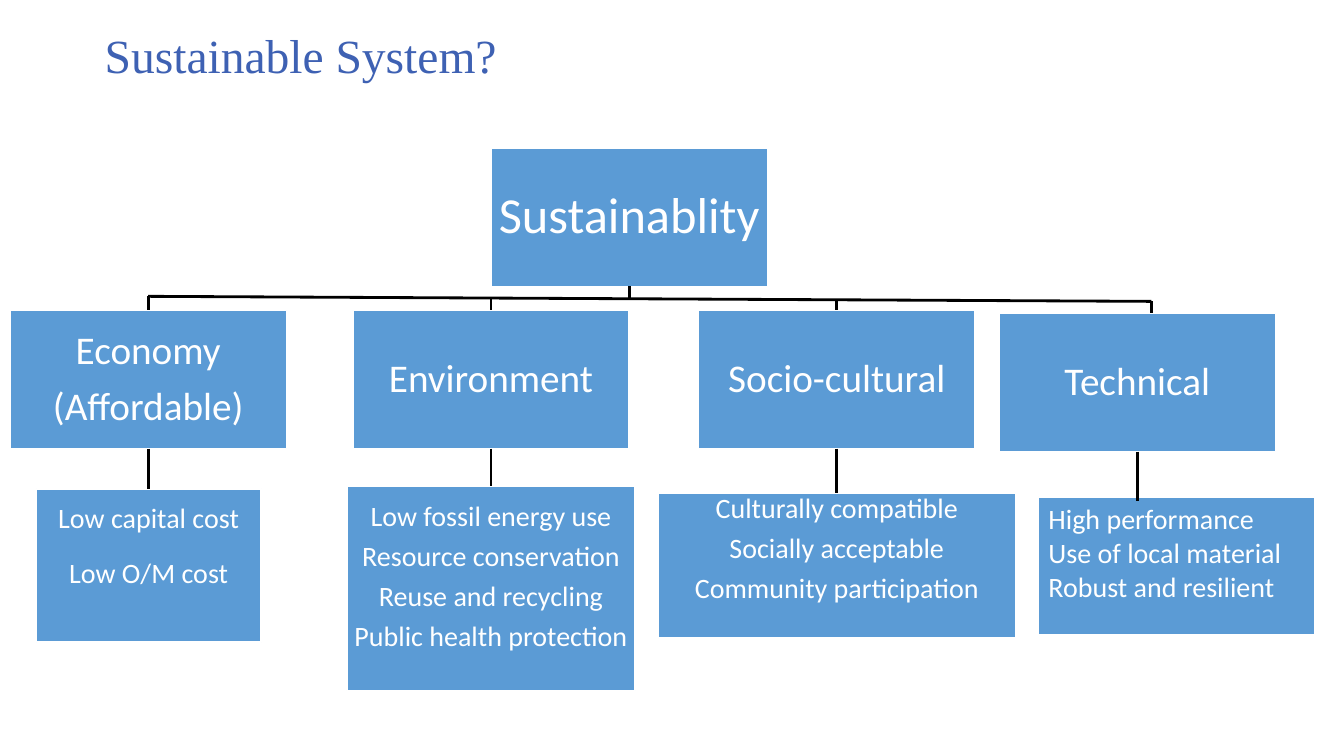
from dataclasses import dataclass

from lxml import etree
from pptx import Presentation
from pptx import util as u
from pptx.dml.color import RGBColor
from pptx.enum import shapes, text
from pptx.oxml.ns import qn

CELL = 0.1  # inches per grid column and row


@dataclass(frozen=True)
class Theme:
    box: str = "5B9BD5"
    white: str = "FFFFFF"
    line: str = "000000"
    title: str = "3E61B3"
    title_font: str = "Times New Roman"
    body_font: str = "Calibri"
    title_size: int = 34
    root_size: int = 36
    pillar_size: int = 28
    detail_size: int = 20
    border: float = 1
    connector: float = 2


@dataclass(frozen=True)
class Box:
    """A rectangle in grid columns and rows."""
    col: float
    row: float
    cols: float
    rows: float

    @property
    def center(self) -> float:
        return self.col + self.cols / 2

    @property
    def bottom(self) -> float:
        return self.row + self.rows


@dataclass(frozen=True)
class Branch:
    pillar: Box
    heading: list[str]
    detail: Box
    points: list[str]
    drop: float  # column where the pillar hangs from the bar
    stem_end: float  # row where the stem meets the detail box
    pad: float = 0.1  # rows above the points
    gap: float = 7  # points after each line
    flush_left: bool = False


T = Theme()
ROOT = Box(48.7, 14.7, 27.4, 13.7)
BAR_LEFT, BAR_RIGHT = (14.7, 29.4), (114.2, 29.9)
BRANCHES = [
    Branch(Box(1, 30.8, 27.4, 13.7), ["Economy", "(Affordable)"],
           Box(3.6, 48.5, 22.3, 15.2), ["Low capital cost", "Low O/M cost"],
           drop=14.7, stem_end=48.5, pad=1.5, gap=18),
    Branch(Box(35, 30.8, 27.4, 13.7), ["Environment"],
           Box(34.4, 48.2, 28.6, 20.3),
           ["Low fossil energy use", "Resource conservation",
            "Reuse and recycling", "Public health protection"],
           drop=48.7, stem_end=48.2, pad=1.6),
    Branch(Box(69.3, 30.8, 27.4, 13.7), ["Socio-cultural"],
           Box(65.3, 48.9, 35.4, 14.4),
           ["Culturally compatible", "Socially acceptable", "Community participation"],
           drop=83, stem_end=48.9),
    Branch(Box(99.1, 31.1, 27.4, 13.7), ["Technical"],
           Box(103, 49.3, 27.4, 13.7),
           ["High performance", "Use of local material", "Robust and resilient"],
           drop=114.2, stem_end=49.7, pad=0.5, gap=0, flush_left=True),
]


def grid(cells: float) -> u.Length:
    return u.Inches(cells * CELL)


def rgb(value: str) -> RGBColor:
    return RGBColor.from_string(value)


def write(sp, lines: list[str], *, size: float, color: str = T.white,
          font: str = T.body_font, align=text.PP_ALIGN.CENTER,
          anchor=text.MSO_ANCHOR.TOP, spacing: float = 0.9, after: float = 0,
          side: float = 0.1, top: float = 0.1) -> None:
    """Fill a shape with one paragraph per line; side and top are insets in cells."""
    tf = sp.text_frame
    tf.word_wrap = True
    tf.vertical_anchor = anchor
    tf.margin_left = tf.margin_right = grid(side)
    tf.margin_top, tf.margin_bottom = grid(top), grid(0.1)
    for i, line in enumerate(lines):
        p = tf.paragraphs[0] if i == 0 else tf.add_paragraph()
        p.alignment, p.line_spacing = align, spacing
        p.space_before, p.space_after = u.Pt(0), u.Pt(after)
        r = p.add_run()
        r.text = line
        r.font.size, r.font.name = u.Pt(size), font
        r.font.color.rgb = rgb(color)


def add_box(s, box: Box):
    sp = s.shapes.add_shape(shapes.MSO_SHAPE.RECTANGLE, grid(box.col), grid(box.row),
                            grid(box.cols), grid(box.rows))
    sp.shadow.inherit = False
    sp.fill.solid()
    sp.fill.fore_color.rgb = rgb(T.box)
    sp.line.color.rgb = rgb(T.white)
    sp.line.width = u.Pt(T.border)
    return sp


def add_heading(s, box: Box, lines: list[str], size: float) -> None:
    write(add_box(s, box), lines, size=size, after=0.35 * size,
          anchor=text.MSO_ANCHOR.MIDDLE)


def add_line(s, start: tuple[float, float], end: tuple[float, float]) -> None:
    line = s.shapes.add_connector(shapes.MSO_CONNECTOR.STRAIGHT,
                                  *map(grid, start + end))
    line.line.color.rgb = rgb(T.line)
    line.line.width = u.Pt(T.connector)
    etree.SubElement(line._element.spPr, qn("a:effectLst"))


def bar_row(col: float) -> float:
    """Row of the slightly sloping bar at a column."""
    (x1, y1), (x2, y2) = BAR_LEFT, BAR_RIGHT
    return y1 + (y2 - y1) * (col - x1) / (x2 - x1)


def add_branch(s, branch: Branch) -> None:
    pillar = branch.pillar
    add_heading(s, pillar, branch.heading, T.pillar_size)
    left = branch.flush_left
    write(add_box(s, branch.detail), branch.points, size=T.detail_size,
          align=text.PP_ALIGN.LEFT if left else text.PP_ALIGN.CENTER,
          spacing=1.0 if left else 0.9, after=branch.gap,
          side=1 if left else 0.1, top=branch.pad)
    add_line(s, (branch.drop, bar_row(branch.drop)), (branch.drop, pillar.row))
    add_line(s, (pillar.center, pillar.bottom), (pillar.center, branch.stem_end))


def main() -> None:
    prs = Presentation()
    prs.slide_width, prs.slide_height = u.Inches(13.33), u.Inches(7.5)
    s = prs.slides.add_slide(prs.slide_layouts[6])
    title = s.shapes.add_textbox(grid(9.4), grid(2.7), grid(115), grid(10.9))
    write(title, ["Sustainable System?"], size=T.title_size, color=T.title,
          font=T.title_font, align=text.PP_ALIGN.LEFT, side=1, top=0.5)
    add_heading(s, ROOT, ["Sustainablity"], T.root_size)
    for branch in BRANCHES:
        add_branch(s, branch)
    add_line(s, BAR_LEFT, BAR_RIGHT)
    add_line(s, (ROOT.center, ROOT.bottom), (ROOT.center, bar_row(ROOT.center)))
    prs.save("out.pptx")


if __name__ == "__main__":
    main()
